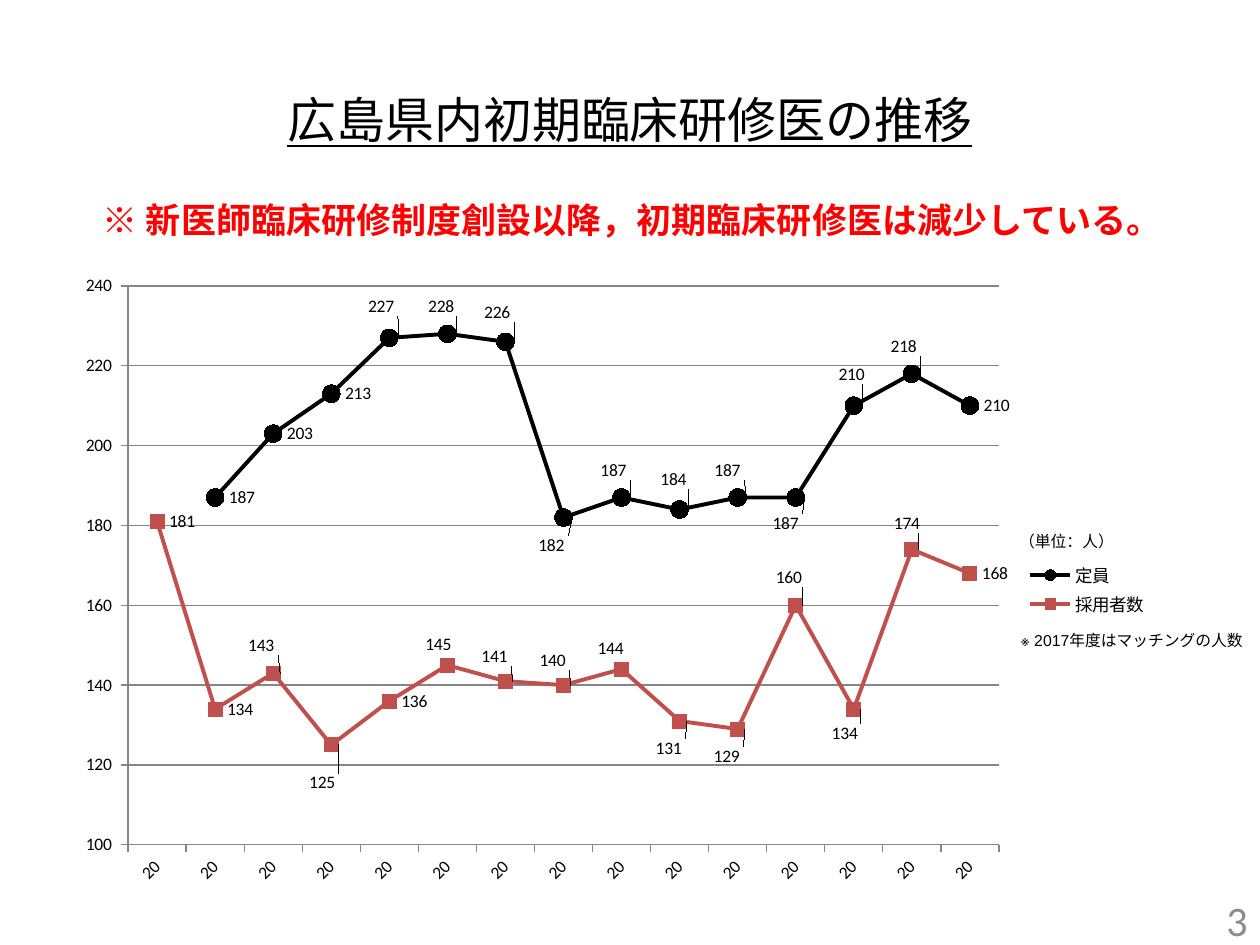
from dataclasses import dataclass

from lxml import etree
from pptx import Presentation
from pptx.chart.data import CategoryChartData
from pptx.dml.color import RGBColor
from pptx.enum.chart import (
    XL_CHART_TYPE, XL_LABEL_POSITION, XL_LEGEND_POSITION, XL_MARKER_STYLE, XL_TICK_MARK,
)
from pptx.enum.shapes import MSO_SHAPE
from pptx.enum.text import MSO_ANCHOR, PP_ALIGN
from pptx.oxml.ns import qn
from pptx.util import Emu, Pt

PX_PER_INCH = 126
BLACK = RGBColor(0x00, 0x00, 0x00)
WHITE = RGBColor(0xFF, 0xFF, 0xFF)
RED = RGBColor(0xFF, 0x00, 0x00)
BRICK = RGBColor(0xC0, 0x50, 0x4D)
AXIS_GRAY = RGBColor(0x86, 0x86, 0x86)
NUMBER_GRAY = RGBColor(0x8C, 0x8C, 0x8C)
CENTER, RIGHT = PP_ALIGN.CENTER, PP_ALIGN.RIGHT
MIDDLE = MSO_ANCHOR.MIDDLE
LABEL_RIGHT = XL_LABEL_POSITION.RIGHT
TICK_OUTSIDE = XL_TICK_MARK.OUTSIDE
CIRCLE, SQUARE = XL_MARKER_STYLE.CIRCLE, XL_MARKER_STYLE.SQUARE
COUNT_FORMAT = "#,##0_ "


@dataclass(frozen=True)
class Area:
    left: int
    top: int
    width: int
    height: int

    def emu(self) -> tuple:
        return tuple(map(px, (self.left, self.top, self.width, self.height)))


@dataclass(frozen=True)
class Caption:
    text: str
    area: Area
    align: PP_ALIGN
    font: dict
    fill: RGBColor | None = None


@dataclass(frozen=True)
class Line:
    """One chart series; label_shifts maps a point to its label's move in px."""
    name: str
    values: tuple
    color: RGBColor
    marker: XL_MARKER_STYLE
    marker_size: int
    label_shifts: dict


CHART = Area(64, 263, 1091, 651)
PLOT = Area(128, 286, 871, 559)
LEGEND = Area(1022, 559, 130, 61)
YEARS = [f"{year}年度" for year in range(2003, 2018)]
LINES = (
    Line("定員",
         (None, 187, 203, 213, 227, 228, 226, 182, 187, 184, 187, 187, 210, 218, 210),
         BLACK, CIRCLE, 10,
         {4: (-35, -31), 5: (-33, -27), 6: (-35, -29), 7: (-39, 28), 8: (-35, -27),
          9: (-33, -30), 10: (-37, -27), 11: (-37, 26), 12: (-29, -31), 13: (-35, -27)}),
    Line("採用者数",
         (181, 134, 143, 125, 136, 145, 141, 140, 144, 131, 129, 160, 134, 174, 168),
         BRICK, SQUARE, 8,
         {2: (-37, -28), 3: (-34, 38), 5: (-34, -21), 6: (-36, -25), 7: (-36, -25),
          8: (-36, -21), 9: (-36, 27), 10: (-36, 27), 11: (-32, -28), 12: (-34, 24),
          13: (-30, -26)}),
)
NOTE_FONT = {"name": "Arial", "size": Pt(9)}
CAPTIONS = (
    Caption("3", Area(966, 895, 294, 50), RIGHT,
            {"name": "Calibri", "size": Pt(24), "color": NUMBER_GRAY}),
    Caption(" ※ 新医師臨床研修制度創設以降，初期臨床研修医は減少している。",
            Area(0, 175, 1257, 89), CENTER,
            {"name": "Noto Sans CJK JP", "size": Pt(20), "bold": True, "color": RED}),
    Caption("（単位：人）", Area(997, 522, 139, 39), CENTER, NOTE_FONT),
    Caption("※ 2017年度はマッチングの人数", Area(978, 621, 277, 39), RIGHT, NOTE_FONT),
    Caption("広島県内初期臨床研修医の推移", Area(15, 64, 1230, 110), CENTER,
            {"name": "Calibri", "size": Pt(28), "underline": True}, WHITE),
)


def px(length: int) -> Emu:
    return Emu(round(length * 914400 / PX_PER_INCH))


def set_font(font, values: dict) -> None:
    for key, value in ({"color": BLACK} | values).items():
        if key == "color":
            font.color.rgb = value
        else:
            setattr(font, key, value)


def add_caption(slide, caption: Caption) -> None:
    if caption.fill is None:
        box = slide.shapes.add_textbox(*caption.area.emu())
    else:
        box = slide.shapes.add_shape(MSO_SHAPE.RECTANGLE, *caption.area.emu())
        box.shadow.inherit = False
        box.fill.solid()
        box.fill.fore_color.rgb = caption.fill
        box.line.fill.background()
    box.text_frame.word_wrap = True
    box.text_frame.vertical_anchor = MIDDLE
    para = box.text_frame.paragraphs[0]
    para.alignment = caption.align
    span = para.add_run()
    span.text = caption.text
    set_font(span.font, caption.font)


def make_layout(values: dict):
    """Build a manual chart layout from fractions of the chart's size."""
    layout = etree.Element(qn("c:layout"))
    manual = etree.SubElement(layout, qn("c:manualLayout"))
    for tag, value in values.items():
        text = value if isinstance(value, str) else f"{value:.4f}"
        etree.SubElement(manual, qn(f"c:{tag}")).set("val", text)
    return layout


def area_layout(area: Area, **target: str):
    return make_layout(target | {
        "xMode": "edge", "yMode": "edge",
        "x": (area.left - CHART.left) / CHART.width,
        "y": (area.top - CHART.top) / CHART.height,
        "w": area.width / CHART.width,
        "h": area.height / CHART.height,
    })


def replace_layout(parent, layout, previous=None) -> None:
    for old in parent.findall(qn("c:layout")):
        parent.remove(old)
    if previous is None:
        parent.insert(0, layout)
    else:
        previous.addnext(layout)


def format_series(series, line: Line) -> None:
    series.smooth = False
    series.format.line.color.rgb = line.color
    series.format.line.width = Pt(2.25)
    series.marker.style = line.marker
    series.marker.size = line.marker_size
    series.marker.format.fill.solid()
    series.marker.format.fill.fore_color.rgb = line.color
    series.marker.format.line.color.rgb = line.color
    labels = series.data_labels
    labels.show_value = True
    labels.number_format = COUNT_FORMAT
    labels.number_format_is_linked = False
    labels.position = LABEL_RIGHT
    for index in line.label_shifts:
        series.points[index].data_label.position = LABEL_RIGHT
    for label in series._element.iter(qn("c:dLbl")):
        index = label.find(qn("c:idx"))
        across, down = line.label_shifts[int(index.get("val"))]
        shift = {"x": across / CHART.width, "y": down / CHART.height}
        replace_layout(label, make_layout(shift), index)


def add_trend_chart(slide) -> None:
    data = CategoryChartData(number_format=COUNT_FORMAT)
    data.categories = YEARS
    for line in LINES:
        data.add_series(line.name, line.values)
    chart = slide.shapes.add_chart(XL_CHART_TYPE.LINE_MARKERS, *CHART.emu(), data).chart
    set_font(chart.font, {"name": "Calibri", "size": Pt(10)})
    chart.has_title = False
    chart.has_legend = True
    chart.legend.position = XL_LEGEND_POSITION.RIGHT
    chart.legend.include_in_layout = False
    chart.plots[0].vary_by_categories = False
    for axis in (chart.category_axis, chart.value_axis):
        axis.major_tick_mark = TICK_OUTSIDE
        axis.format.line.color.rgb = AXIS_GRAY
    scale = {"minimum_scale": 100, "maximum_scale": 240, "major_unit": 20,
             "has_major_gridlines": True}
    for key, value in scale.items():
        setattr(chart.value_axis, key, value)
    chart.value_axis.major_gridlines.format.line.color.rgb = AXIS_GRAY
    chart.value_axis.tick_labels.number_format = COUNT_FORMAT
    chart.value_axis.tick_labels.number_format_is_linked = False
    for series, line in zip(chart.plots[0].series, LINES):
        format_series(series, line)
    root = chart._chartSpace
    replace_layout(root.find(".//" + qn("c:plotArea")), area_layout(PLOT, layoutTarget="inner"))
    legend = root.find(".//" + qn("c:legend"))
    replace_layout(legend, area_layout(LEGEND), legend.find(qn("c:legendPos")))


def main() -> None:
    deck = Presentation()
    deck.slide_width, deck.slide_height = px(1260), px(945)
    page = deck.slides.add_slide(deck.slide_layouts[6])
    add_trend_chart(page)
    for caption in CAPTIONS:
        add_caption(page, caption)
    deck.save("out.pptx")


if __name__ == "__main__":
    main()
